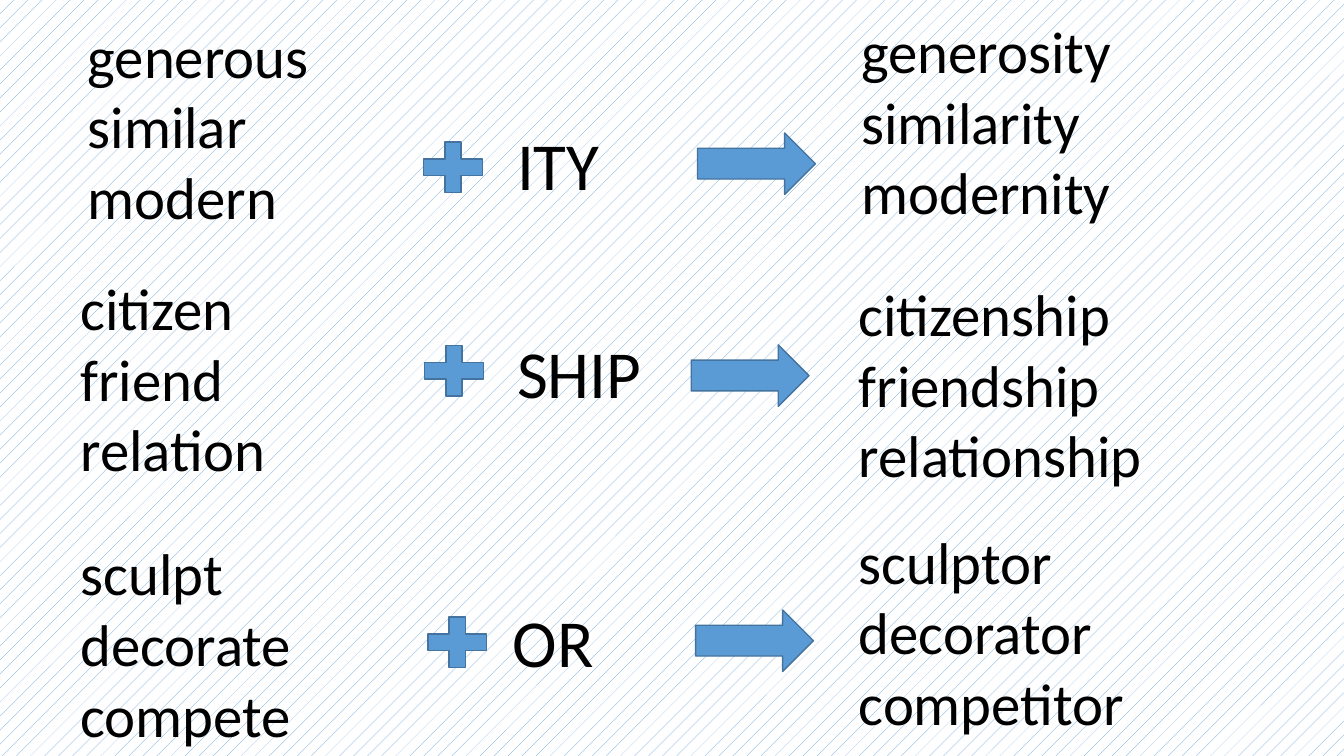
"""Build a slide showing how noun suffixes turn base words into nouns."""
from dataclasses import dataclass

from pptx import Presentation
from pptx.dml.color import RGBColor
from pptx.enum.dml import MSO_PATTERN
from pptx.enum.shapes import MSO_SHAPE
from pptx.slide import Slide
from pptx.util import Cm, Pt

PLUS = MSO_SHAPE.MATH_PLUS
ARROW = MSO_SHAPE.RIGHT_ARROW
DOTS = MSO_PATTERN.PERCENT_5

COLORS = {"blue": "5B9BD5", "outline": "43739E", "text": "000000", "white": "FFFFFF"}
FONT = "Calibri"
WORD_PT, SUFFIX_PT = 42, 48
WORDS_HEIGHT, SUFFIX_HEIGHT = 5.64, 2.31
BASE_WIDTH, NOUN_WIDTH = 8.5, 11.5
SIGN_SIZES = {PLUS: (2.01, 1.73), ARROW: (2.97, 1.55)}

Point = tuple[float, float]


@dataclass
class SuffixRule:
    """One row: base words, plus sign, suffix, arrow and resulting nouns."""
    bases: list[str]
    base_at: Point
    plus_at: Point
    suffix: str
    suffix_at: Point
    suffix_width: float
    arrow_at: Point
    nouns: list[str]
    noun_at: Point


RULES = [
    SuffixRule(["generous", "similar", "modern"], (1.96, 0.36), (10.41, 3.35),
               "ITY", (12.78, 2.99), 2.6, (17.58, 3.35),
               ["generosity", "similarity", "modernity"], (21.46, 0.25)),
    SuffixRule(["citizen", "friend", "relation"], (1.78, 6.73), (10.44, 8.48),
               "SHIP", (12.78, 8.23), 3.68, (17.42, 8.69),
               ["citizenship", "friendship", "relationship"], (21.39, 6.88)),
    SuffixRule(["sculpt", "decorate", "compete"], (1.78, 13.41), (10.52, 15.32),
               "OR", (12.67, 15.01), 2.57, (17.53, 15.37),
               ["sculptor", "decorator", "competitor"], (21.39, 13.11)),
]


def rgb(name: str) -> RGBColor:
    """Return the named colour."""
    return RGBColor.from_string(COLORS[name])


def add_text(s: Slide, lines: list[str], at: Point, width: float, height: float,
             size: int, wrap: bool = True) -> None:
    """Add a text box with one paragraph per line."""
    tf = s.shapes.add_textbox(Cm(at[0]), Cm(at[1]), Cm(width), Cm(height)).text_frame
    tf.word_wrap = wrap
    tf.text = "\n".join(lines)
    for p in tf.paragraphs:
        for r in p.runs:
            r.font.name = FONT
            r.font.size = Pt(size)
            r.font.color.rgb = rgb("text")


def add_sign(s: Slide, kind: MSO_SHAPE, at: Point) -> None:
    """Add a blue plus sign or arrow."""
    width, height = SIGN_SIZES[kind]
    sp = s.shapes.add_shape(kind, Cm(at[0]), Cm(at[1]), Cm(width), Cm(height))
    sp.shadow.inherit = False
    sp.fill.solid()
    sp.fill.fore_color.rgb = rgb("blue")
    sp.line.color.rgb = rgb("outline")
    sp.line.width = Pt(1)


def add_rule(s: Slide, rule: SuffixRule) -> None:
    """Add one suffix row to the slide."""
    add_text(s, rule.bases, rule.base_at, BASE_WIDTH, WORDS_HEIGHT, WORD_PT)
    add_sign(s, PLUS, rule.plus_at)
    add_text(s, [rule.suffix], rule.suffix_at, rule.suffix_width, SUFFIX_HEIGHT,
             SUFFIX_PT, wrap=False)
    add_sign(s, ARROW, rule.arrow_at)
    add_text(s, rule.nouns, rule.noun_at, NOUN_WIDTH, WORDS_HEIGHT, WORD_PT)


def main() -> None:
    """Create and save the presentation."""
    prs = Presentation()
    prs.slide_width, prs.slide_height = Cm(33.87), Cm(19.05)
    s = prs.slides.add_slide(prs.slide_layouts[6])
    fill = s.background.fill
    fill.patterned()
    fill.pattern = DOTS
    fill.fore_color.rgb = rgb("blue")
    fill.back_color.rgb = rgb("white")
    for rule in RULES:
        add_rule(s, rule)
    prs.save("out.pptx")


if __name__ == "__main__":
    main()
